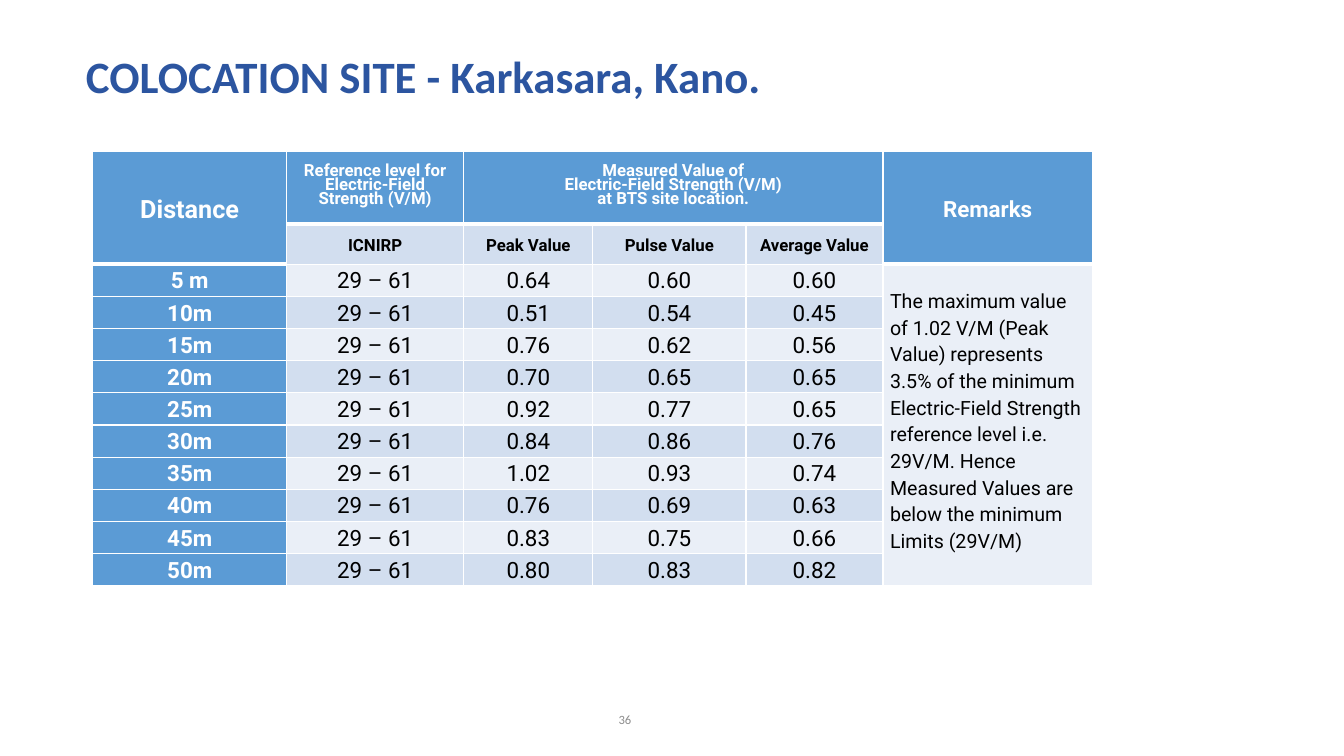
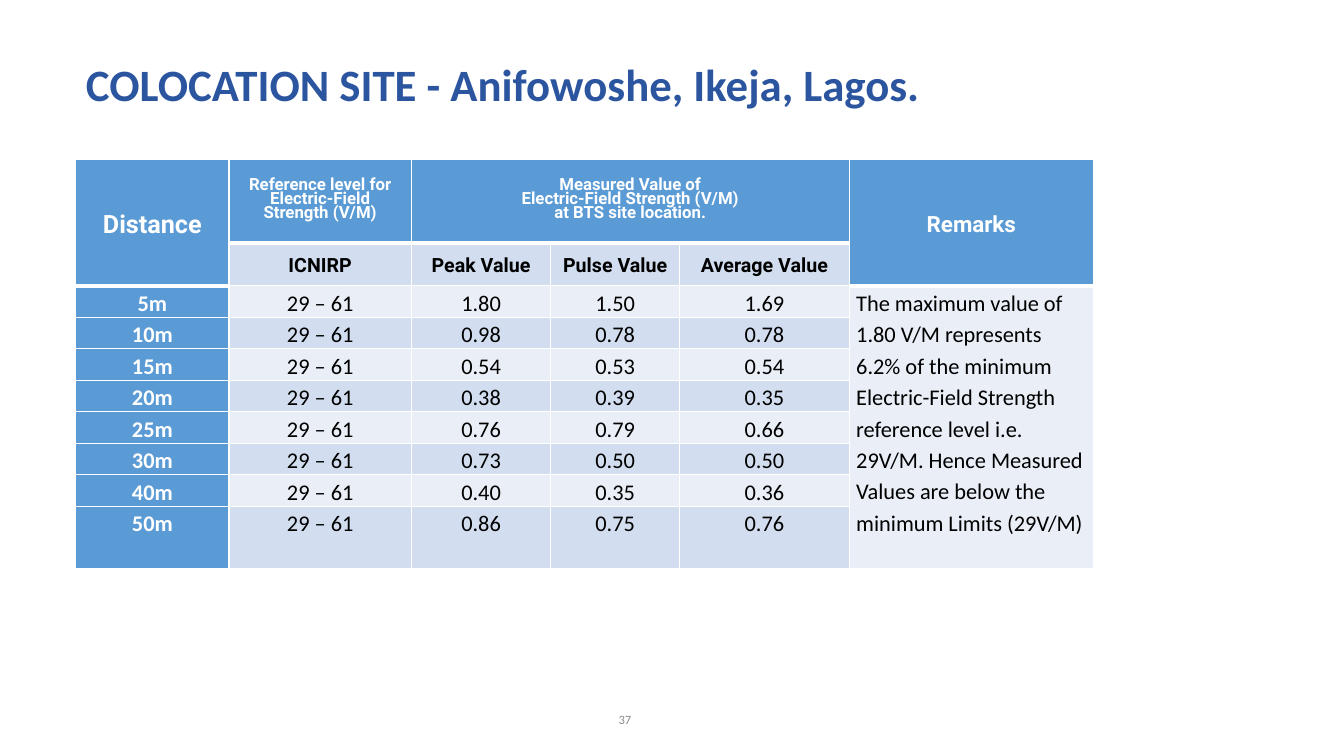
from dataclasses import dataclass

from lxml.etree import SubElement
from pptx import Presentation
from pptx.dml.color import RGBColor
from pptx.enum.text import MSO_ANCHOR, MSO_AUTO_SIZE, PP_ALIGN
from pptx.oxml.ns import qn
from pptx.util import Cm, Pt

TITLE_BLUE = RGBColor(0x2C, 0x55, 0xA0)
HEADER_BLUE = RGBColor(0x5B, 0x9B, 0xD5)
BAND_DARK = RGBColor(0xD2, 0xDE, 0xEF)
BAND_LIGHT = RGBColor(0xEA, 0xEF, 0xF7)
WHITE = RGBColor(0xFF, 0xFF, 0xFF)
BLACK = RGBColor(0, 0, 0)
GREY = RGBColor(0x8C, 0x8C, 0x8C)

HEADING_FONT = "Roboto"
TITLE_FONT = "Calibri"
REFERENCE_RANGE = "29 – 61"
REFERENCE_HEADING = "Reference level for Electric-Field Strength (V/M)"
MEASURED_HEADING = "Measured Value of\vElectric-Field Strength (V/M)\vat BTS site location."
SUBHEADINGS = ("ICNIRP", "Peak Value", "Pulse Value", "Average Value")


@dataclass
class Site:
    """Content and measures, in centimetres, of one colocation site."""

    page: int
    title: str
    title_top: float
    table_left: float
    table_top: float
    column_widths: tuple
    header_heights: tuple
    reading_heights: tuple
    body_font: str
    subheading_size: int
    remarks_size: int
    remarks_margin: float
    remarks: str
    readings: tuple


SITES = (
    Site(
        page=36,
        title="COLOCATION SITE - Karkasara, Kano.",
        title_top=0.15,
        table_left=2.34,
        table_top=3.82,
        column_widths=(4.88, 4.47, 3.25, 3.86, 3.45, 5.28),
        header_heights=(1.82, 1.02),
        reading_heights=(0.81,) * 10,
        body_font="Roboto",
        subheading_size=12,
        remarks_size=14,
        remarks_margin=0.57,
        remarks="The maximum value of 1.02 V/M (Peak Value) represents 3.5% of the "
        "minimum Electric-Field Strength reference level i.e. 29V/M. Hence "
        "Measured Values are below the minimum Limits (29V/M)",
        readings=(
            ("5 m", "0.64", "0.60", "0.60"),
            ("10m", "0.51", "0.54", "0.45"),
            ("15m", "0.76", "0.62", "0.56"),
            ("20m", "0.70", "0.65", "0.65"),
            ("25m", "0.92", "0.77", "0.65"),
            ("30m", "0.84", "0.86", "0.76"),
            ("35m", "1.02", "0.93", "0.74"),
            ("40m", "0.76", "0.69", "0.63"),
            ("45m", "0.83", "0.75", "0.66"),
            ("50m", "0.80", "0.83", "0.82"),
        ),
    ),
    Site(
        page=37,
        title="COLOCATION SITE - Anifowoshe, Ikeja, Lagos.",
        title_top=0.34,
        table_left=1.91,
        table_top=4.02,
        column_widths=(3.86, 4.6, 3.51, 3.25, 4.27, 6.16),
        header_heights=(2.11, 1.07),
        reading_heights=(0.79,) * 7 + (1.58,),
        body_font="Calibri",
        subheading_size=14,
        remarks_size=16,
        remarks_margin=0,
        remarks="The maximum value of 1.80 V/M represents 6.2% of the minimum "
        "Electric-Field Strength reference level i.e. 29V/M. Hence Measured "
        "Values are below the minimum Limits (29V/M)",
        readings=(
            ("5m", "1.80", "1.50", "1.69"),
            ("10m", "0.98", "0.78", "0.78"),
            ("15m", "0.54", "0.53", "0.54"),
            ("20m", "0.38", "0.39", "0.35"),
            ("25m", "0.76", "0.79", "0.66"),
            ("30m", "0.73", "0.50", "0.50"),
            ("40m", "0.40", "0.35", "0.36"),
            ("50m", "0.86", "0.75", "0.76"),
        ),
    ),
)


def write_text(frame, text, size=16, font=HEADING_FONT, color=BLACK, bold=False,
               align=PP_ALIGN.CENTER, spacing=1.15):
    """Write one formatted paragraph into a text frame."""
    frame.word_wrap = True
    paragraph = frame.paragraphs[0]
    paragraph.text = text
    paragraph.alignment = align
    paragraph.line_spacing = spacing
    for run in paragraph.runs:
        run.font.size = Pt(size)
        run.font.name = font
        run.font.bold = bold
        run.font.color.rgb = color


def style_cell(cell, fill, bottom_width=1):
    """Give a cell its white borders, fill and narrow side margins."""
    properties = cell._tc.get_or_add_tcPr()
    for side, width in (("L", 1), ("R", 1), ("T", 1), ("B", bottom_width)):
        border = SubElement(properties, qn(f"a:ln{side}"), w=str(Pt(width)))
        paint = SubElement(border, qn("a:solidFill"))
        SubElement(paint, qn("a:srgbClr"), val=str(WHITE))
    cell.fill.solid()
    cell.fill.fore_color.rgb = fill
    cell.margin_left = cell.margin_right = Cm(0.18)
    cell.margin_top = cell.margin_bottom = 0


def fill_header(table, site):
    """Fill the two heading rows and merge their spanning cells."""
    last = len(site.column_widths) - 1
    for column in range(last + 1):
        style_cell(table.cell(0, column), HEADER_BLUE, bottom_width=3)
        if column in (0, last):
            style_cell(table.cell(1, column), HEADER_BLUE, bottom_width=3)
        else:
            style_cell(table.cell(1, column), BAND_DARK)
    for column in (0, last):
        table.cell(0, column).merge(table.cell(1, column))
    table.cell(0, 2).merge(table.cell(0, last - 1))

    headings = (
        (0, "Distance", 18, 1.15),
        (1, REFERENCE_HEADING, 12, Pt(10)),
        (2, MEASURED_HEADING, 12, Pt(10)),
        (last, "Remarks", 16, 1.15),
    )
    for column, heading, size, spacing in headings:
        cell = table.cell(0, column)
        cell.vertical_anchor = MSO_ANCHOR.MIDDLE
        write_text(cell.text_frame, heading, size=size, color=WHITE, bold=True,
                   spacing=spacing)
    for column, subheading in enumerate(SUBHEADINGS, start=1):
        cell = table.cell(1, column)
        cell.vertical_anchor = MSO_ANCHOR.MIDDLE
        write_text(cell.text_frame, subheading, size=site.subheading_size, bold=True)


def fill_readings(table, site):
    """Fill the banded readings and the remarks beside them."""
    first = len(site.header_heights)
    last = len(site.column_widths) - 1
    for index, (distance, *values) in enumerate(site.readings):
        row = first + index
        band = BAND_DARK if index % 2 else BAND_LIGHT
        distance_cell = table.cell(row, 0)
        style_cell(distance_cell, HEADER_BLUE)
        write_text(distance_cell.text_frame, distance, font=site.body_font,
                   color=WHITE, bold=True)
        for column, value in enumerate((REFERENCE_RANGE, *values), start=1):
            cell = table.cell(row, column)
            style_cell(cell, band)
            write_text(cell.text_frame, value, font=site.body_font)
        style_cell(table.cell(row, last), BAND_LIGHT)

    remarks_cell = table.cell(first, last)
    remarks_cell.merge(table.cell(first + len(site.readings) - 1, last))
    remarks_cell.margin_top = Cm(site.remarks_margin)
    write_text(remarks_cell.text_frame, site.remarks, size=site.remarks_size,
               font=site.body_font, align=PP_ALIGN.LEFT)


def add_readings_table(slide, site):
    """Place the table of field strengths at the site's position."""
    heights = site.header_heights + site.reading_heights
    table = slide.shapes.add_table(
        len(heights), len(site.column_widths), Cm(site.table_left), Cm(site.table_top),
        Cm(sum(site.column_widths)), Cm(sum(heights))).table
    table.first_row = table.horz_banding = False
    for column, width in zip(table.columns, site.column_widths):
        column.width = Cm(width)
    for row, height in zip(table.rows, heights):
        row.height = Cm(height)
    fill_header(table, site)
    fill_readings(table, site)


def place_title(slide, site):
    """Move and format the title placeholder."""
    title = slide.shapes.title
    title.left, title.top = Cm(1.91), Cm(site.title_top)
    title.width, title.height = Cm(25.2), Cm(3.68)
    frame = title.text_frame
    frame.auto_size = MSO_AUTO_SIZE.NONE
    frame.vertical_anchor = MSO_ANCHOR.MIDDLE
    write_text(frame, site.title, size=32, font=TITLE_FONT, color=TITLE_BLUE,
               bold=True, align=PP_ALIGN.LEFT, spacing=0.9)


def add_page_number(slide, page):
    """Place the page number at the foot of the slide."""
    footer = slide.shapes.add_textbox(Cm(11.94), Cm(17.63), Cm(7.62), Cm(1.02))
    footer.text_frame.vertical_anchor = MSO_ANCHOR.MIDDLE
    write_text(footer.text_frame, str(page), size=9, font=TITLE_FONT, color=GREY,
               spacing=1.0)


def add_site_slide(presentation, site):
    """Add the slide of one colocation site."""
    slide = presentation.slides.add_slide(presentation.slide_layouts[5])
    place_title(slide, site)
    add_readings_table(slide, site)
    add_page_number(slide, site.page)


def main():
    """Build and save the presentation."""
    presentation = Presentation()
    presentation.slide_width, presentation.slide_height = Cm(33.87), Cm(19.05)
    for site in SITES:
        add_site_slide(presentation, site)
    presentation.save("out.pptx")


if __name__ == "__main__":
    main()
